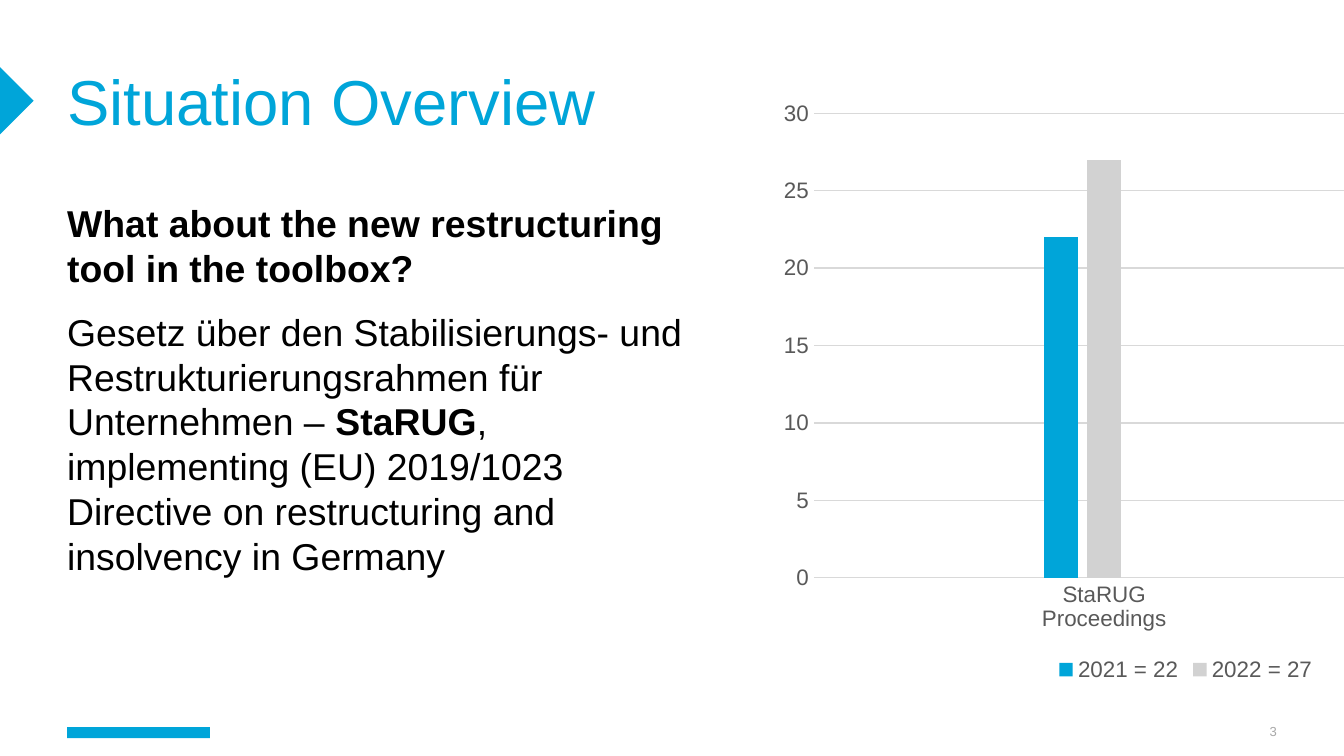
from lxml import etree
from pptx import Presentation
from pptx.chart.data import CategoryChartData
from pptx.dml.color import RGBColor
from pptx.enum.chart import XL_CHART_TYPE, XL_LEGEND_POSITION, XL_TICK_MARK
from pptx.enum.shapes import MSO_SHAPE
from pptx.enum.text import MSO_ANCHOR, PP_ALIGN
from pptx.oxml.ns import qn
from pptx.util import Pt

COLUMNS = XL_CHART_TYPE.COLUMN_CLUSTERED
BOTTOM = XL_LEGEND_POSITION.BOTTOM
NO_TICK = XL_TICK_MARK.NONE
RECTANGLE = MSO_SHAPE.RECTANGLE
TOP, MIDDLE = MSO_ANCHOR.TOP, MSO_ANCHOR.MIDDLE
LEFT, RIGHT = PP_ALIGN.LEFT, PP_ALIGN.RIGHT

FONT = "Arial"
COLORS = {
    "blue": "00A5D9",
    "silver": "D2D2D2",
    "cyan": "3CC5E3",
    "black": "000000",
    "label": "595959",
    "grid": "D9D9D9",
    "number": "A8A8A8",
}

TITLE = [[("Situation Overview", False)]]
BODY = [
    [("What about the new restructuring tool in the toolbox?", True)],
    [
        ("Gesetz über den Stabilisierungs- und Restrukturierungsrahmen für Unternehmen – ", False),
        ("StaRUG", True),
        (", implementing (EU) 2019/1023 Directive on restructuring and insolvency in Germany", False),
    ],
]
PAGE_NUMBER = [[("3", False)]]
CATEGORIES = ["", "StaRUG Proceedings", "", ""]
SERIES = [
    ("2021 = 22", [None, 22, None, None], "blue"),
    ("2022 = 27", [None, 27, None, None], "silver"),
    ("Series 3", [None] * 4, "cyan"),
]
HIDDEN_LEGEND_ENTRY = 2

WIDTH, HEIGHT, MARGIN = 720, 405, 36
ARROW = [(0, 36), (18, 54), (0, 72)]


def rgb(name):
    return RGBColor.from_string(COLORS[name])


def set_font(font, size, color, bold=False):
    font.name, font.size, font.bold = FONT, Pt(size), bold
    font.color.rgb = rgb(color)


def add_text(slide, paragraphs, box, size, color, align=LEFT, anchor=TOP, before=0, spacing=1.0):
    tf = slide.shapes.add_textbox(*map(Pt, box)).text_frame
    tf.word_wrap = True
    tf.vertical_anchor = anchor
    tf.margin_left = tf.margin_right = tf.margin_top = tf.margin_bottom = 0
    for i, runs in enumerate(paragraphs):
        p = tf.add_paragraph() if i else tf.paragraphs[0]
        p.alignment, p.space_before, p.line_spacing = align, Pt(before), spacing
        for text, bold in runs:
            r = p.add_run()
            r.text = text
            set_font(r.font, size, color, bold)


def fill_plain(s, color):
    s.shadow.inherit = False
    s.fill.solid()
    s.fill.fore_color.rgb = rgb(color)
    s.line.fill.background()


def set_line(line, color):
    line.color.rgb = rgb(color)
    line.width = Pt(0.75)


def add_proceedings_chart(slide, box):
    data = CategoryChartData()
    data.categories = CATEGORIES
    for name, values, _ in SERIES:
        data.add_series(name, values)
    chart = slide.shapes.add_chart(COLUMNS, *map(Pt, box), data).chart
    chart.has_title = False
    set_font(chart.font, 10, "black")

    plot = chart.plots[0]
    plot.vary_by_categories = False
    plot.gap_width, plot.overlap = 219, -27
    for series, (_, _, color) in zip(plot.series, SERIES):
        series.format.fill.solid()
        series.format.fill.fore_color.rgb = rgb(color)

    cat_axis, val_axis = chart.category_axis, chart.value_axis
    for axis in (cat_axis, val_axis):
        axis.major_tick_mark = axis.minor_tick_mark = NO_TICK
        set_font(axis.tick_labels.font, 12, "label")
    set_line(cat_axis.format.line, "grid")
    val_axis.format.line.fill.background()
    val_axis.minimum_scale, val_axis.maximum_scale, val_axis.major_unit = 0, 30, 5
    set_line(val_axis.major_gridlines.format.line, "grid")

    chart.has_legend = True
    legend = chart.legend
    legend.position = BOTTOM
    legend.include_in_layout = False
    set_font(legend.font, 12, "label")
    entry = etree.Element(qn("c:legendEntry"))
    etree.SubElement(entry, qn("c:idx")).set("val", str(HIDDEN_LEGEND_ENTRY))
    etree.SubElement(entry, qn("c:delete")).set("val", "1")
    chart.element.find(".//" + qn("c:legendPos")).addnext(entry)


def main():
    prs = Presentation()
    prs.slide_width, prs.slide_height = Pt(WIDTH), Pt(HEIGHT)
    slide = prs.slides.add_slide(prs.slide_layouts[6])

    builder = slide.shapes.build_freeform(*ARROW[0], scale=Pt(1))
    builder.add_line_segments(ARROW[1:])
    fill_plain(builder.convert_to_shape(), "blue")
    logo_block = slide.shapes.add_shape(RECTANGLE, Pt(MARGIN), Pt(389.5), Pt(76.5), Pt(6))
    fill_plain(logo_block, "blue")

    add_text(slide, TITLE, (MARGIN, 41, WIDTH - 2 * MARGIN, 72), 34, "blue", spacing=0.8)
    add_text(slide, PAGE_NUMBER, (522, 387.5, 162, 9), 7, "number", align=RIGHT, anchor=MIDDLE)
    add_text(slide, BODY, (MARGIN, 107.5, 349, 260.5), 20, "black", before=10)
    add_proceedings_chart(slide, (411, 48, 448.5, 320))

    prs.save("out.pptx")


if __name__ == "__main__":
    main()
